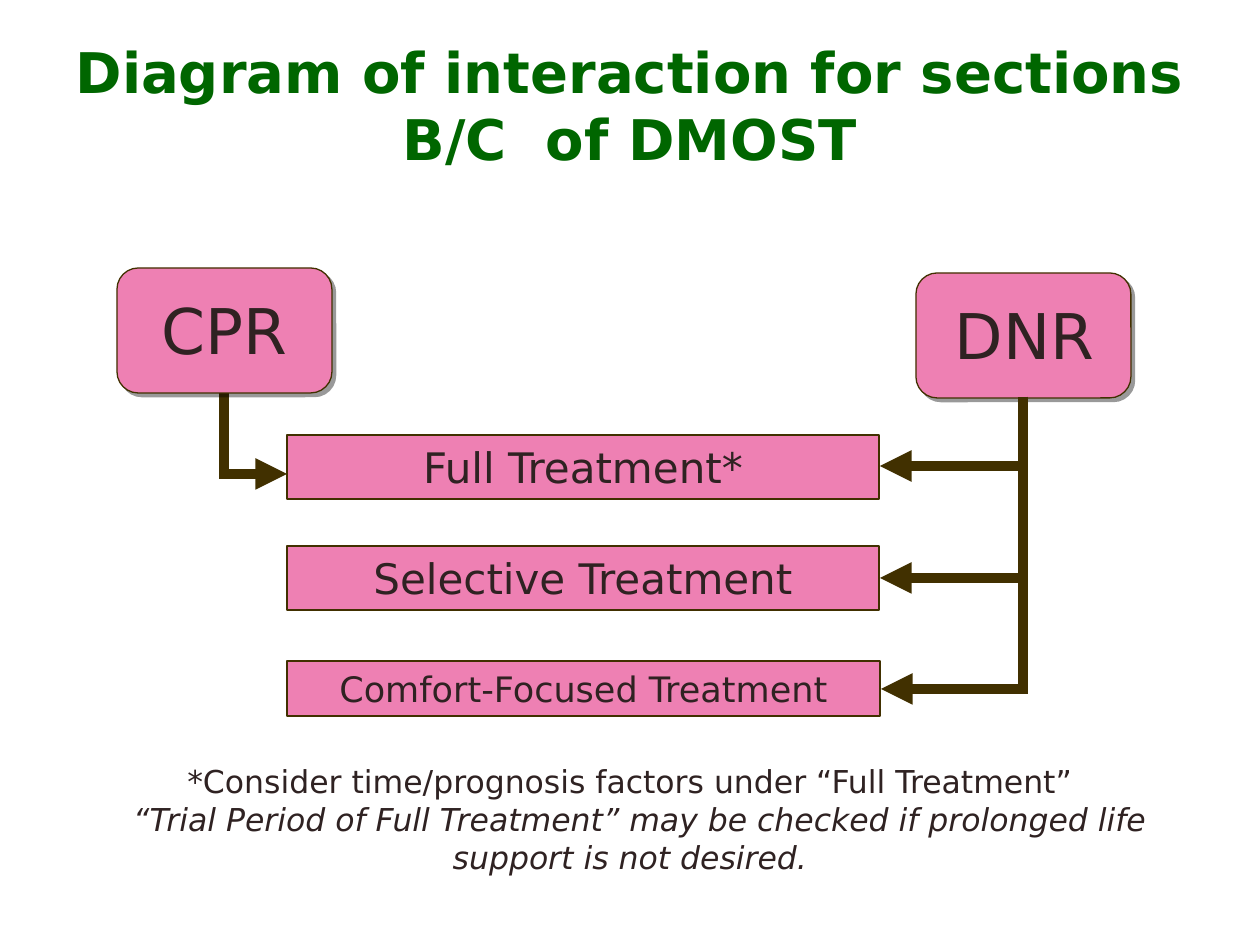
import pptx
import pptx.util
import pptx.dml.color
import pptx.enum.shapes
import pptx.enum.text
import pptx.oxml
import pptx.oxml.ns

PX = 914400 / 126
FONT = "DejaVu Sans"
GREEN = pptx.dml.color.RGBColor(0x00, 0x66, 0x00)
PINK = pptx.dml.color.RGBColor(0xEE, 0x80, 0xB3)
BROWN = pptx.dml.color.RGBColor(0x41, 0x30, 0x00)
INK = pptx.dml.color.RGBColor(0x2F, 0x22, 0x22)
TOP = pptx.enum.text.MSO_ANCHOR.TOP
MIDDLE = pptx.enum.text.MSO_ANCHOR.MIDDLE
RECTANGLE = pptx.enum.shapes.MSO_SHAPE.RECTANGLE
ROUNDED = pptx.enum.shapes.MSO_SHAPE.ROUNDED_RECTANGLE
NAMESPACE = pptx.oxml.ns.nsdecls("a")

TITLE = "Diagram of interaction for sections B/C  of DMOST"
# Boxes are left, top, width, height in px
ORDERS = [
    ("CPR", (117, 268, 215, 125), (80, 285, 289, 88)),
    ("DNR", (916, 273, 215, 125), (896, 290, 257, 88)),
]
TREATMENTS = [
    ("Full Treatment*", 24, (287, 435, 592, 64)),
    ("Selective Treatment", 24, (287, 546, 592, 64)),
    ("Comfort-Focused Treatment", 20, (287, 661, 593, 55)),
]
NOTES = [
    "*Consider time/prognosis factors under “Full Treatment”",
    "“Trial Period of Full Treatment” may be checked if prolonged life support is not desired.",
]
NOTE_INDENT = 20
# Each arrow drops from its start, then turns towards its end
ARROWS_FROM_CPR = [((224, 373), (287, 474))]
ARROWS_FROM_DNR = [((1023, 397), end) for end in [(880, 466), (880, 578), (881, 689)]]


def px(length):
    return pptx.util.Emu(round(length * PX))


def emu_box(box):
    return [px(length) for length in box]


def write(shape, lines, size, anchor, color=INK, bold=None):
    frame = shape.text_frame
    frame.word_wrap = True
    frame.vertical_anchor = anchor
    frame.text = "\n".join(lines)
    for paragraph in frame.paragraphs:
        paragraph.alignment = pptx.enum.text.PP_ALIGN.CENTER
        for run in paragraph.runs:
            run.font.name = FONT
            run.font.size = pptx.util.Pt(size)
            run.font.color.rgb = color
            run.font.bold = bold
    return frame.paragraphs


def add_text(shapes, box, lines, size, anchor, **style):
    return write(shapes.add_textbox(*emu_box(box)), lines, size, anchor, **style)


def add_box(shapes, preset, box):
    shape = shapes.add_shape(preset, *emu_box(box))
    shape.shadow.inherit = False
    shape.fill.solid()
    shape.fill.fore_color.rgb = PINK
    shape.line.color.rgb = BROWN
    shape.line.width = pptx.util.Pt(0.75)
    return shape


def add_order(slide, label, box, label_box):
    group = slide.shapes.add_group_shape()
    card = add_box(group.shapes, ROUNDED, box)
    card.adjustments[0] = 0.17
    effects = card._element.spPr.find(pptx.oxml.ns.qn("a:effectLst"))
    effects.append(pptx.oxml.parse_xml(
        f'<a:outerShdw {NAMESPACE} dist="38100" dir="2700000" algn="tl" rotWithShape="0">'
        '<a:srgbClr val="000000"><a:alpha val="40000"/></a:srgbClr></a:outerShdw>'))
    add_text(group.shapes, label_box, [label], 36, MIDDLE)


def add_arrow(slide, start, end):
    """Draw a one-bend arrow: the preset turned a quarter, so its sides swap."""
    (x1, y1), (x2, y2) = start, end
    width, height = abs(y2 - y1), abs(x2 - x1)
    left, top = (x1 + x2 - width) / 2, (y1 + y2 - height) / 2
    right, bottom = left + width, top + height
    rightwards = x2 > x1
    if rightwards:
        left, right = right, left
    arrow = slide.shapes.add_connector(
        pptx.enum.shapes.MSO_CONNECTOR.ELBOW, px(left), px(top), px(right), px(bottom))
    arrow.line.color.rgb = BROWN
    arrow.line.width = pptx.util.Pt(6)
    properties = arrow._element.spPr
    properties.find(pptx.oxml.ns.qn("a:prstGeom")).set("prst", "bentConnector2")
    properties.find(pptx.oxml.ns.qn("a:xfrm")).set("rot", str((270 if rightwards else 90) * 60000))
    line = properties.find(pptx.oxml.ns.qn("a:ln"))
    line.append(pptx.oxml.parse_xml(f'<a:miter {NAMESPACE} lim="800000"/>'))
    line.append(pptx.oxml.parse_xml(f'<a:tailEnd {NAMESPACE} type="triangle"/>'))
    properties.append(pptx.oxml.parse_xml(f"<a:effectLst {NAMESPACE}/>"))


def main():
    deck = pptx.Presentation()
    deck.slide_width, deck.slide_height = px(1260), px(945)
    slide = deck.slides.add_slide(deck.slide_layouts[6])

    add_text(slide.shapes, (63, 24, 1134, 161), [TITLE], 32, MIDDLE, color=GREEN, bold=True)
    for arrow in ARROWS_FROM_CPR:
        add_arrow(slide, *arrow)
    for order in ORDERS:
        add_order(slide, *order)
    for label, size, box in TREATMENTS:
        write(add_box(slide.shapes, RECTANGLE, box), [label], size, TOP)

    trial_note = add_text(slide.shapes, (78, 756, 1104, 127), NOTES, 18, TOP)[1]
    trial_note.runs[0].font.italic = True
    trial_note._p.get_or_add_pPr().set("indent", str(px(NOTE_INDENT)))

    for arrow in ARROWS_FROM_DNR:
        add_arrow(slide, *arrow)
    deck.save("out.pptx")


if __name__ == "__main__":
    main()
